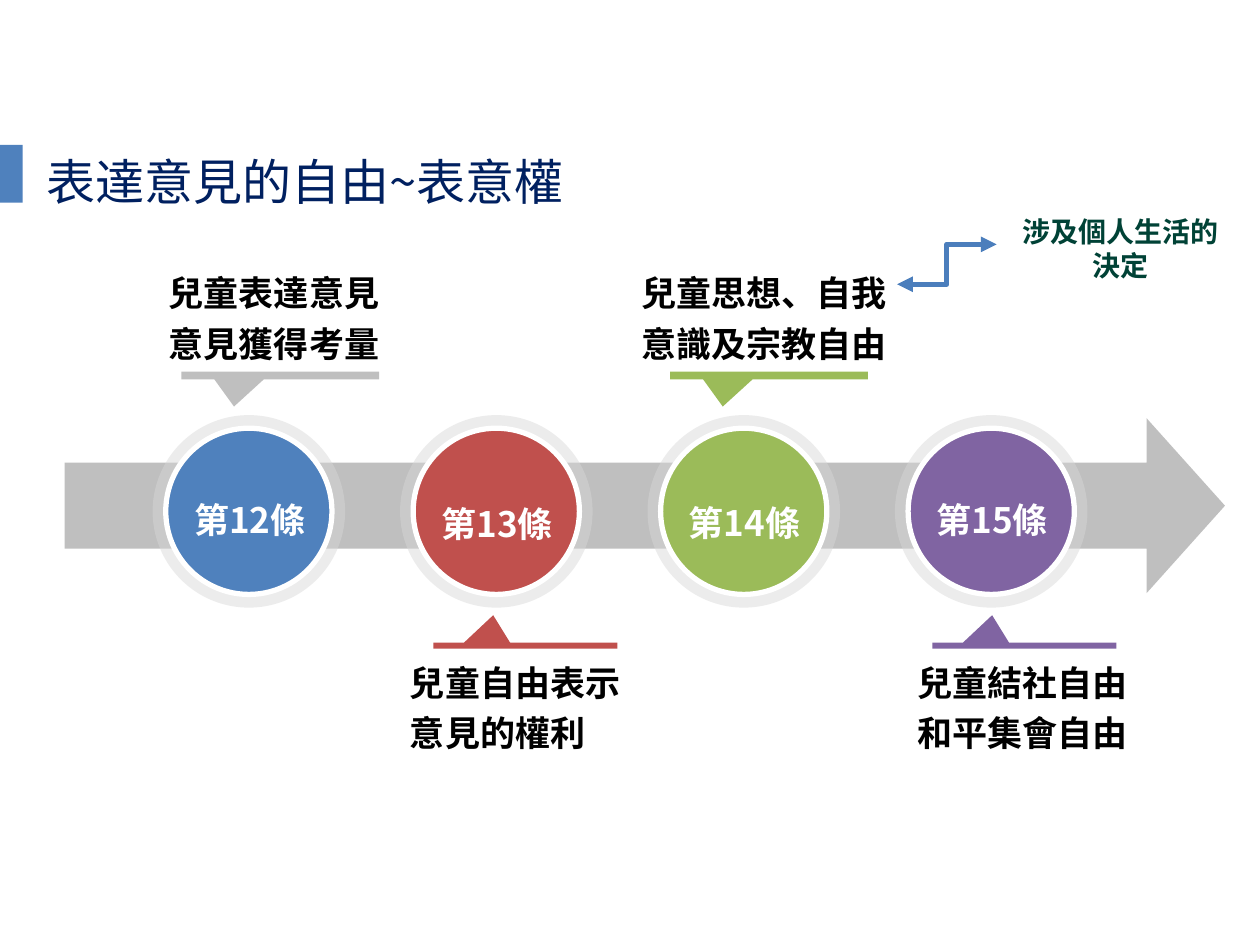
from lxml import etree
from pptx import Presentation
from pptx.dml.color import RGBColor
from pptx.enum import shapes, text
from pptx.oxml import ns
from pptx.util import Pt

FONT = "Noto Sans CJK SC"
WHITE = RGBColor(0xFF, 0xFF, 0xFF)
BLACK = RGBColor(0, 0, 0)
NAVY = RGBColor(0x00, 0x20, 0x60)
DARK_GREEN = RGBColor(0x00, 0x42, 0x36)
GRAY = RGBColor(0xBF, 0xBF, 0xBF)
HALO_GRAY = RGBColor(0xD8, 0xD8, 0xD8)
BLUE = RGBColor(0x4F, 0x81, 0xBD)
RED = RGBColor(0xC0, 0x50, 0x4D)
GREEN = RGBColor(0x9B, 0xBB, 0x59)
PURPLE = RGBColor(0x80, 0x64, 0xA2)
LINK_BLUE = RGBColor(0x4B, 0x7E, 0xBC)

SHAPE = shapes.MSO_SHAPE
ALIGN = text.PP_ALIGN
ANCHOR = text.MSO_ANCHOR

FIRST_CENTER, CENTER_STEP, CENTER_Y = 142.2, 141.4, 292.2
HALO_SIZE, DISC_SIZE = 110, 95

# Article, colour, top of its label
ARTICLES = [("第12條", BLUE, 281.5), ("第13條", RED, 283.7),
            ("第14條", GREEN, 283), ("第15條", PURPLE, 281.5)]

# Pointer (left, colour, above the arrow), note lines, note left and width
NOTES = [
    (103.7, GRAY, True, ["兒童表達意見", "意見獲得考量"], 90, 134),
    (247.7, RED, False, ["兒童自由表示意見的權利"], 227.8, 142.6),
    (383, GREEN, True, ["兒童思想、自我意識及宗教自由"], 360, 158.4),
    (532.8, PURPLE, False, ["兒童結社自由和平集會自由"], 517.7, 152.6),
]


def write(shape, lines, size, color, bold=False, align=ALIGN.LEFT,
          anchor=ANCHOR.TOP, spacing=None, margins=(7.2, 3.6)):
    frame = shape.text_frame
    frame.word_wrap = True
    frame.auto_size = text.MSO_AUTO_SIZE.NONE
    frame.vertical_anchor = anchor
    frame.margin_left = frame.margin_right = Pt(margins[0])
    frame.margin_top = frame.margin_bottom = Pt(margins[1])
    for index, line in enumerate(lines):
        paragraph = frame.add_paragraph() if index else frame.paragraphs[0]
        paragraph.alignment = align
        paragraph.line_spacing = spacing
        run = paragraph.add_run()
        run.text = line
        font = run.font
        font.name, font.size, font.bold = FONT, Pt(size), bold
        font.color.rgb = color
        east_asian = etree.SubElement(font._element, ns.qn("a:ea"))
        east_asian.set("typeface", FONT)


def add_shape(slide, kind, left, top, width, height, fill=None, outline=None,
              adjustments=(), opacity=None):
    shape = slide.shapes.add_shape(kind, Pt(left), Pt(top), Pt(width), Pt(height))
    shape.shadow.inherit = False
    for index, value in enumerate(adjustments):
        shape.adjustments[index] = value
    if fill is None:
        shape.fill.background()
    else:
        shape.fill.solid()
        shape.fill.fore_color.rgb = fill
    if opacity is not None:
        color = shape._element.spPr.find(".//" + ns.qn("a:srgbClr"))
        etree.SubElement(color, ns.qn("a:alpha")).set("val", str(opacity * 1000))
    if outline is None:
        shape.line.fill.background()
    else:
        shape.line.color.rgb = outline
        shape.line.width = Pt(3)
    return shape


def add_text(slide, lines, left, top, width, height, **style):
    box = slide.shapes.add_textbox(Pt(left), Pt(top), Pt(width), Pt(height))
    write(box, lines, **style)


def add_circle(slide, center, size, **style):
    add_shape(slide, SHAPE.OVAL, center - size / 2, CENTER_Y - size / 2,
              size, size, **style)


def add_article(slide, index, label, color, label_top):
    center = FIRST_CENTER + index * CENTER_STEP
    add_circle(slide, center, HALO_SIZE, fill=HALO_GRAY, opacity=48)
    add_circle(slide, center, DISC_SIZE, fill=color, outline=WHITE)
    add_text(slide, [label], center - 60.2, label_top, 121.5, 39,
             size=20, color=WHITE, bold=True, align=ALIGN.CENTER)


def add_note(slide, pointer_left, color, above, lines, left, width):
    if above:
        box, tip, top = (212.4, 113, 4.4), (-0.234, 4.033), 146.9
    else:
        box, tip, top = (367.2, 105.1, 3.4), (-0.175, -5.095), 369.4
    bar_top, bar_width, bar_height = box
    add_shape(slide, SHAPE.RECTANGULAR_CALLOUT, pointer_left, bar_top,
              bar_width, bar_height, fill=color, adjustments=tip)
    add_text(slide, lines, left, top, width, 65, size=20, color=BLACK,
             bold=True, spacing=1.2, margins=(6.5, 3.6))


def add_double_arrow(slide, start_x, start_y, end_x, end_y):
    connector = slide.shapes.add_connector(
        shapes.MSO_CONNECTOR.ELBOW, Pt(start_x), Pt(start_y), Pt(end_x), Pt(end_y))
    connector.line.color.rgb = LINK_BLUE
    connector.line.width = Pt(3)
    line = connector.line._get_or_add_ln()
    for end in ("a:headEnd", "a:tailEnd"):
        etree.SubElement(line, ns.qn(end)).set("type", "triangle")
    etree.SubElement(connector._element.spPr, ns.qn("a:effectLst"))


def add_title(slide, words):
    title = slide.shapes.title
    title.left, title.top, title.width, title.height = (
        Pt(21.6), Pt(83.5), Pt(314.6), Pt(39.6))
    write(title, [words], size=28, color=NAVY, margins=(5, 2.9))


def main():
    presentation = Presentation()
    presentation.slide_width, presentation.slide_height = Pt(720), Pt(540)
    slide = presentation.slides.add_slide(presentation.slide_layouts[5])

    # Title with its accent block
    add_title(slide, "表達意見的自由~表意權")
    add_shape(slide, SHAPE.RECTANGLE, 0, 82.8, 13, 33.1, fill=BLUE)

    # Timeline arrow and the articles on it
    add_shape(slide, SHAPE.RIGHT_ARROW, 37, 239, 663, 100, fill=GRAY,
              adjustments=(0.491, 0.448))
    for index, article in enumerate(ARTICLES):
        add_article(slide, index, *article)

    # Notes above and below the arrow
    for note in NOTES:
        add_note(slide, *note)

    # Side remark
    add_double_arrow(slide, 512.6, 162.5, 569.5, 139.7)
    remark = add_shape(slide, SHAPE.ROUNDED_RECTANGLE, 569.5, 116, 141.8, 51.8)
    write(remark, ["涉及個人生活的決定"], size=16, color=DARK_GREEN, bold=True,
          align=ALIGN.CENTER, anchor=ANCHOR.MIDDLE)

    presentation.save("out.pptx")


if __name__ == "__main__":
    main()
